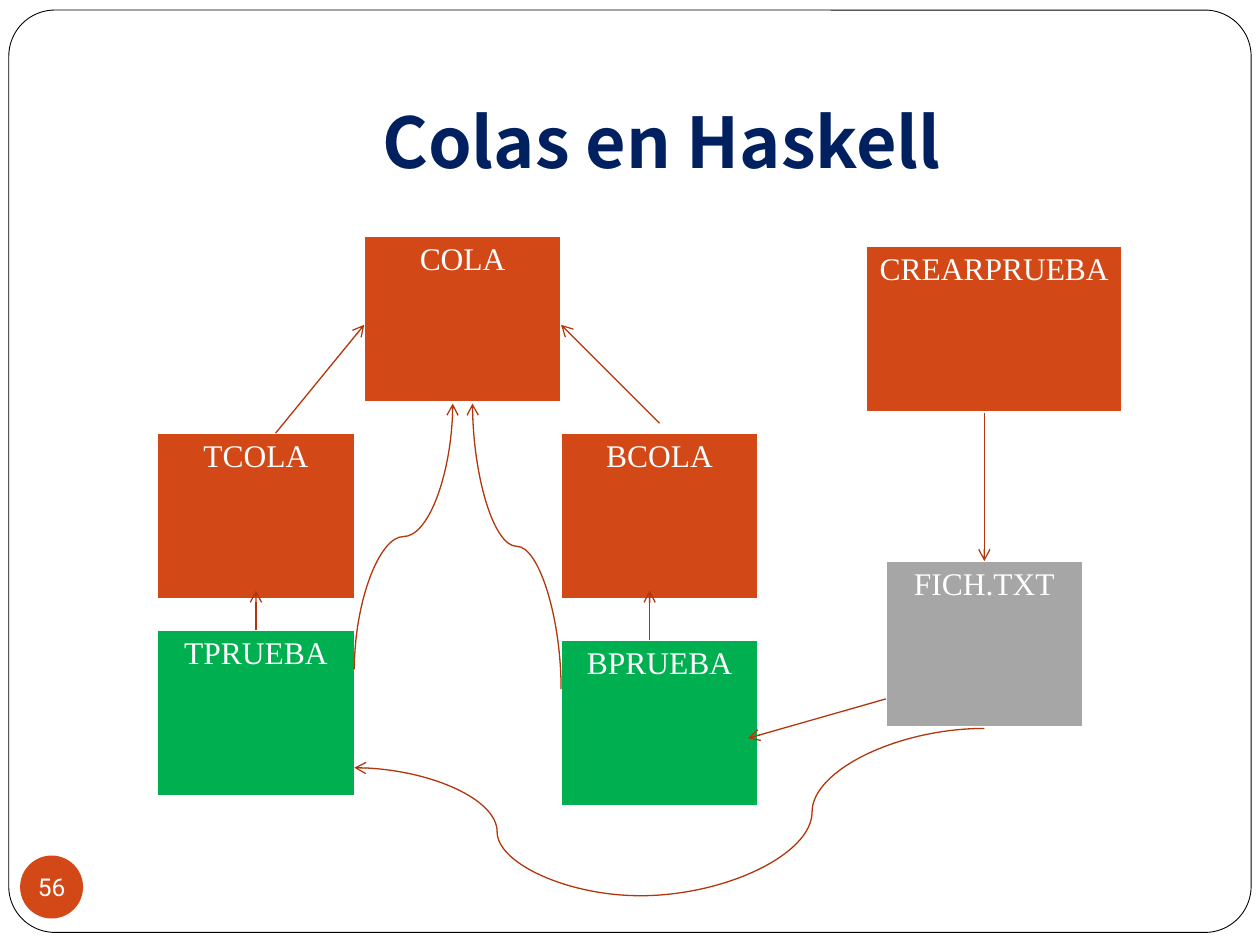
from dataclasses import dataclass

from lxml.etree import SubElement
from pptx import Presentation
from pptx.dml.color import RGBColor
from pptx.enum.shapes import MSO_CONNECTOR as Link, MSO_SHAPE as Shape
from pptx.enum.text import MSO_ANCHOR as Anchor, PP_ALIGN as Align
from pptx.oxml.ns import qn
from pptx.util import Emu, Inches, Pt

COLORS = {
    "paper": "FFFFFF",
    "ink": "000000",
    "title": "002060",
    "module": "D34817",
    "test": "00B050",
    "file": "A6A6A6",
    "arrow": "B1360B",
}
WIDTH, HEIGHT = Inches(10), Inches(7.5)
COLUMNS = 128  # square grid cells across the slide
BOX_COLS, BOX_ROWS = 20, 17
BORDERS = {"a:lnL": 1, "a:lnR": 1, "a:lnT": 1, "a:lnB": 3}


@dataclass
class Box:
    label: str
    col: float
    row: float
    color: str
    cols: float = BOX_COLS


@dataclass
class Arrow:
    start: tuple[float, float]
    end: tuple[float, float]
    kind: str = "straight"  # straight, across (curve) or upward (curve)
    head: bool = True


BOXES = [
    Box("COLA", 37, 24, "module"),
    Box("BCOLA", 57, 44, "module"),
    Box("TCOLA", 16, 44, "module"),
    Box("TPRUEBA", 16, 64, "test"),
    Box("BPRUEBA", 57, 65, "test"),
    Box("CREARPRUEBA", 88, 25, "module", cols=26),
    Box("FICH.TXT", 90, 57, "file"),
]
ARROWS = [
    Arrow((28, 44), (37, 33)),
    Arrow((67, 43), (57, 33)),
    Arrow((36, 68), (46, 41), "upward"),
    Arrow((57, 70), (48, 41), "upward"),
    Arrow((26, 64), (26, 60)),
    Arrow((66, 65), (66, 60)),
    Arrow((100, 42), (100, 57)),
    Arrow((90, 71), (76, 75)),
    Arrow((100, 74), (65, 91), "across", head=False),
    Arrow((65, 91), (36, 78), "across"),
]


def grid(*cells: float) -> list[Emu]:
    return [Emu(round(cell * WIDTH / COLUMNS)) for cell in cells]


def rgb(name: str) -> RGBColor:
    return RGBColor.from_string(COLORS[name])


def write(frame, text: str, size: float, font: str, color: str, bold: bool = False) -> None:
    para = frame.paragraphs[0]
    para.alignment = Align.CENTER
    span = para.add_run()
    span.text = text
    for name, value in {"size": Pt(size), "name": font, "bold": bold}.items():
        setattr(span.font, name, value)
    span.font.color.rgb = rgb(color)


def set_frame(frame, **values) -> None:
    for name, value in values.items():
        setattr(frame, name, value)


def draw_shape(page, kind, place: tuple, fill: str, line: str | None = None):
    shape = page.shapes.add_shape(kind, *map(Inches, place))
    shape.shadow.inherit = False
    shape.fill.solid()
    shape.fill.fore_color.rgb = rgb(fill)
    if line:
        shape.line.color.rgb = rgb(line)
        shape.line.width = Pt(0.5)
    else:
        shape.line.fill.background()
    return shape


def draw_box(page, box: Box) -> None:
    place = grid(box.col, box.row, box.cols, BOX_ROWS)
    table = page.shapes.add_table(1, 1, *place).table
    set_frame(table, first_row=False, horz_banding=False)
    cell = table.cell(0, 0)
    write(cell.text_frame, box.label, 18, "Times New Roman", "paper")
    # Borders come before the fill in the cell properties
    properties = cell._tc.get_or_add_tcPr()
    for tag, points in BORDERS.items():
        edge = SubElement(properties, qn(tag), w=str(Pt(points)))
        solid = SubElement(edge, qn("a:solidFill"))
        SubElement(solid, qn("a:srgbClr"), val=COLORS["paper"])
    cell.fill.solid()
    cell.fill.fore_color.rgb = rgb(box.color)


def draw_arrow(page, arrow: Arrow) -> None:
    (x1, y1), (x2, y2) = arrow.start, arrow.end
    upward = arrow.kind == "upward"
    if upward:
        # Lay the curve on its side; a three-quarter turn stands it up
        mid_x, mid_y = (x1 + x2) / 2, (y1 + y2) / 2
        half_x, half_y = (y1 - y2) / 2, (x2 - x1) / 2
        x1, x2 = mid_x - half_x, mid_x + half_x
        y1, y2 = mid_y - half_y, mid_y + half_y
    kind = Link.STRAIGHT if arrow.kind == "straight" else Link.CURVE
    link = page.shapes.add_connector(kind, *grid(x1, y1, x2, y2))
    link.line.color.rgb = rgb("arrow")
    link.line.width = Pt(0.75)
    properties = link._element.spPr
    if upward:
        properties.find(qn("a:xfrm")).set("rot", str(270 * 60000))
    if arrow.head:
        SubElement(link.line._get_or_add_ln(), qn("a:tailEnd"), type="arrow")
    SubElement(properties, qn("a:effectLst"))


def main() -> None:
    deck = Presentation()
    deck.slide_width, deck.slide_height = WIDTH, HEIGHT
    page = deck.slides.add_slide(deck.slide_layouts[6])

    # Rounded page border
    border = draw_shape(page, Shape.ROUNDED_RECTANGLE, (0.07, 0.08, 9.86, 7.32), "paper", "ink")
    border.adjustments[0] = 0.05

    # Title
    title = page.shapes.add_textbox(*map(Inches, (1, 0.3, 8.5, 1.25))).text_frame
    set_frame(title, word_wrap=True, vertical_anchor=Anchor.BOTTOM, margin_bottom=Inches(0.1))
    write(title, "Colas en Haskell", 40, "Noto Sans CJK KR", "title", bold=True)

    # Page number
    badge = draw_shape(page, Shape.OVAL, (0.16, 6.79, 0.5, 0.5), "module").text_frame
    set_frame(badge, word_wrap=False, vertical_anchor=Anchor.MIDDLE,
              margin_left=0, margin_right=0, margin_top=0, margin_bottom=0)
    write(badge, "56", 14, "Roboto", "paper")

    # Module diagram
    for box in BOXES:
        draw_box(page, box)
    for arrow in ARROWS:
        draw_arrow(page, arrow)

    deck.save("out.pptx")


if __name__ == "__main__":
    main()
